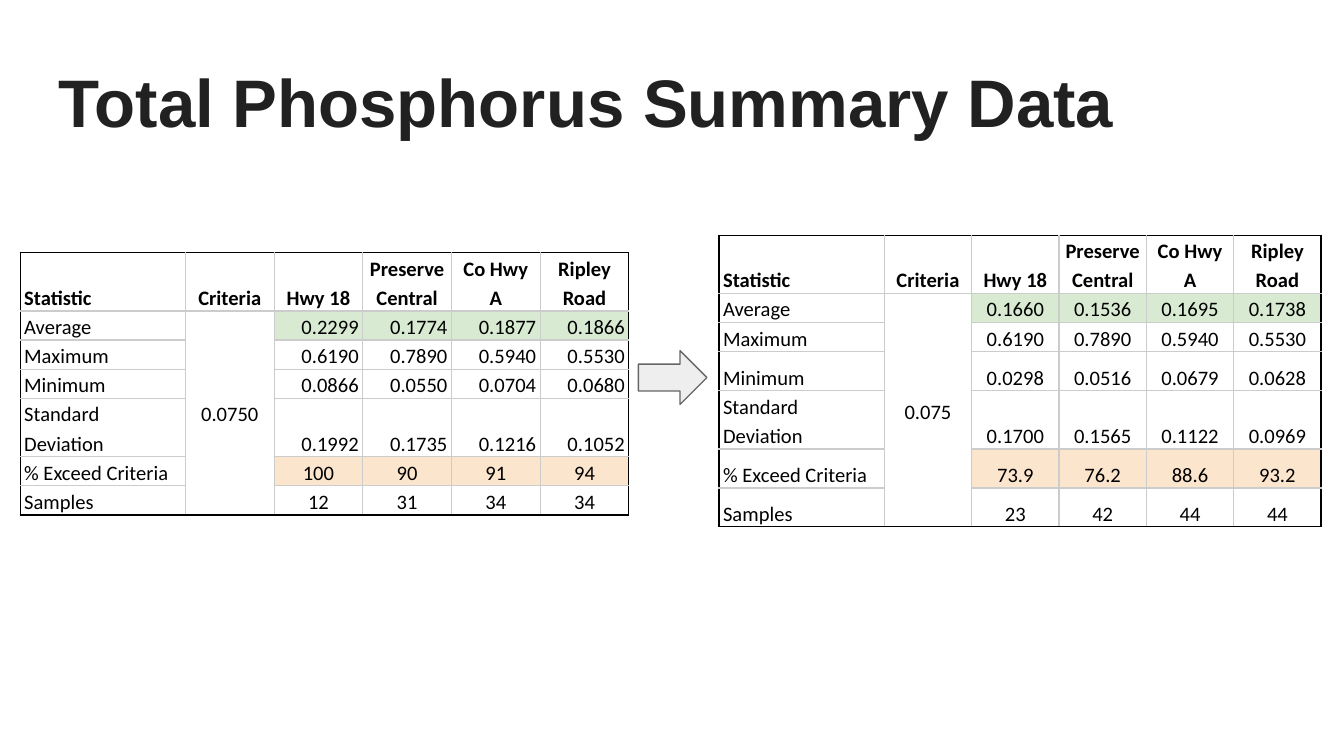
from lxml import etree
from pptx import Presentation
from pptx.dml.color import RGBColor
from pptx.enum.shapes import MSO_SHAPE
from pptx.enum.text import MSO_ANCHOR, PP_ALIGN
from pptx.oxml.ns import qn
from pptx.util import Inches, Pt

LEFT, CENTER, RIGHT = PP_ALIGN.LEFT, PP_ALIGN.CENTER, PP_ALIGN.RIGHT
MIDDLE, BOTTOM = MSO_ANCHOR.MIDDLE, MSO_ANCHOR.BOTTOM
RIGHT_ARROW = MSO_SHAPE.RIGHT_ARROW

HEADERS = ["Statistic", "Criteria", "Hwy 18", "Preserve Central", "Co Hwy A", "Ripley Road"]
STATISTICS = ["Average", "Maximum", "Minimum", "Standard Deviation", "% Exceed Criteria", "Samples"]
ROW_FILLS = {"Average": "D9EAD3", "% Exceed Criteria": "FCE5CD"}
MEASURED = STATISTICS[:4]
BEFORE = [
    ["0.2299", "0.1774", "0.1877", "0.1866"],
    ["0.6190", "0.7890", "0.5940", "0.5530"],
    ["0.0866", "0.0550", "0.0704", "0.0680"],
    ["0.1992", "0.1735", "0.1216", "0.1052"],
    ["100", "90", "91", "94"],
    ["12", "31", "34", "34"],
]
AFTER = [
    ["0.1660", "0.1536", "0.1695", "0.1738"],
    ["0.6190", "0.7890", "0.5940", "0.5530"],
    ["0.0298", "0.0516", "0.0679", "0.0628"],
    ["0.1700", "0.1565", "0.1122", "0.0969"],
    ["73.9", "76.2", "88.6", "93.2"],
    ["23", "42", "44", "44"],
]


def rgb(value):
    return RGBColor.from_string(value)


def write(tf, text, size=11, font="Calibri", color="000000", bold=False, align=LEFT, spacing=1.15):
    p = tf.paragraphs[0]
    p.alignment = align
    p.line_spacing = spacing
    r = p.add_run()
    r.text = text
    r.font.size = Pt(size)
    r.font.name = font
    r.font.bold = bold
    r.font.color.rgb = rgb(color)


def set_borders(cell, colors, width):
    tc_pr = cell._tc.get_or_add_tcPr()
    for i, (tag, color) in enumerate(zip(("a:lnL", "a:lnR", "a:lnT", "a:lnB"), colors)):
        ln = etree.Element(qn(tag), w=str(Pt(width)))
        fill = etree.SubElement(ln, qn("a:solidFill"))
        etree.SubElement(fill, qn("a:srgbClr"), val=color)
        tc_pr.insert(i, ln)


class SlideBuilder:
    outline = "000000"
    grid = "CCCCCC"

    def __init__(self, s):
        self.s = s

    def title(self, text, x, y, w, h):
        tf = self.s.shapes.add_textbox(Inches(x), Inches(y), Inches(w), Inches(h)).text_frame
        tf.word_wrap = True
        tf.vertical_anchor = BOTTOM
        tf.margin_left = tf.margin_right = tf.margin_top = tf.margin_bottom = Inches(0.1)
        write(tf, text, size=36, font="Arial", color="212121", bold=True, spacing=1)

    def arrow(self, x, y, w, h):
        sp = self.s.shapes.add_shape(RIGHT_ARROW, Inches(x), Inches(y), Inches(w), Inches(h))
        sp.shadow.inherit = False
        sp.fill.solid()
        sp.fill.fore_color.rgb = rgb("EEEEEE")
        sp.line.color.rgb = rgb("666666")
        sp.line.width = Pt(0.75)

    def cell(self, cell, text, fill=None, anchor=BOTTOM, **style):
        cell.margin_left = cell.margin_right = Inches(0.03)
        cell.margin_top = cell.margin_bottom = 0
        cell.vertical_anchor = anchor
        if fill:
            cell.fill.solid()
            cell.fill.fore_color.rgb = rgb(fill)
        else:
            cell.fill.background()
        if text:
            write(cell.text_frame, text, **style)

    def summary_table(self, x, y, widths, heights, criteria, values, measured_align, border):
        rows, cols = len(heights), len(widths)
        table = self.s.shapes.add_table(
            rows, cols, Inches(x), Inches(y), Inches(sum(widths)), Inches(sum(heights))
        ).table
        table.first_row = table.horz_banding = False
        for column, width in zip(table.columns, widths):
            column.width = Inches(width)
        for row, height in zip(table.rows, heights):
            row.height = Inches(height)
        table.cell(1, 1).merge(table.cell(rows - 1, 1))

        for c, header in enumerate(HEADERS):
            self.cell(table.cell(0, c), header, bold=True, align=CENTER if c else LEFT)
        for r, (name, numbers) in enumerate(zip(STATISTICS, values), 1):
            self.cell(table.cell(r, 0), name)
            self.cell(table.cell(r, 1), criteria if r == 1 else "", anchor=MIDDLE, align=CENTER)
            align = measured_align if name in MEASURED else CENTER
            for c, number in enumerate(numbers, 2):
                self.cell(table.cell(r, c), number, fill=ROW_FILLS.get(name), align=align)

        for r in range(rows):
            for c in range(cols):
                last = r == rows - 1 or (c == 1 and r > 0)
                edges = (c == 0, c == cols - 1, r == 0, last)
                colors = [self.outline if edge else self.grid for edge in edges]
                set_borders(table.cell(r, c), colors, border)


def main():
    prs = Presentation()
    prs.slide_width = Inches(10)
    prs.slide_height = prs.slide_width * 9 // 16
    slide = SlideBuilder(prs.slides.add_slide(prs.slide_layouts[6]))
    slide.summary_table(0.15, 1.88, [1.23] + [0.66] * 5,
                        [0.39, 0.21, 0.21, 0.21, 0.39, 0.21, 0.21],
                        "0.0750", BEFORE, RIGHT, 0.75)
    slide.summary_table(5.35, 1.75, [1.23] + [0.65] * 5,
                        [0.41, 0.21, 0.21, 0.29, 0.41, 0.29, 0.29],
                        "0.075", AFTER, CENTER, 0.83)
    slide.arrow(4.75, 2.61, 0.51, 0.4)
    slide.title("Total Phosphorus Summary Data", 0.34, 0.33, 9.34, 0.82)
    prs.save("out.pptx")


if __name__ == "__main__":
    main()
